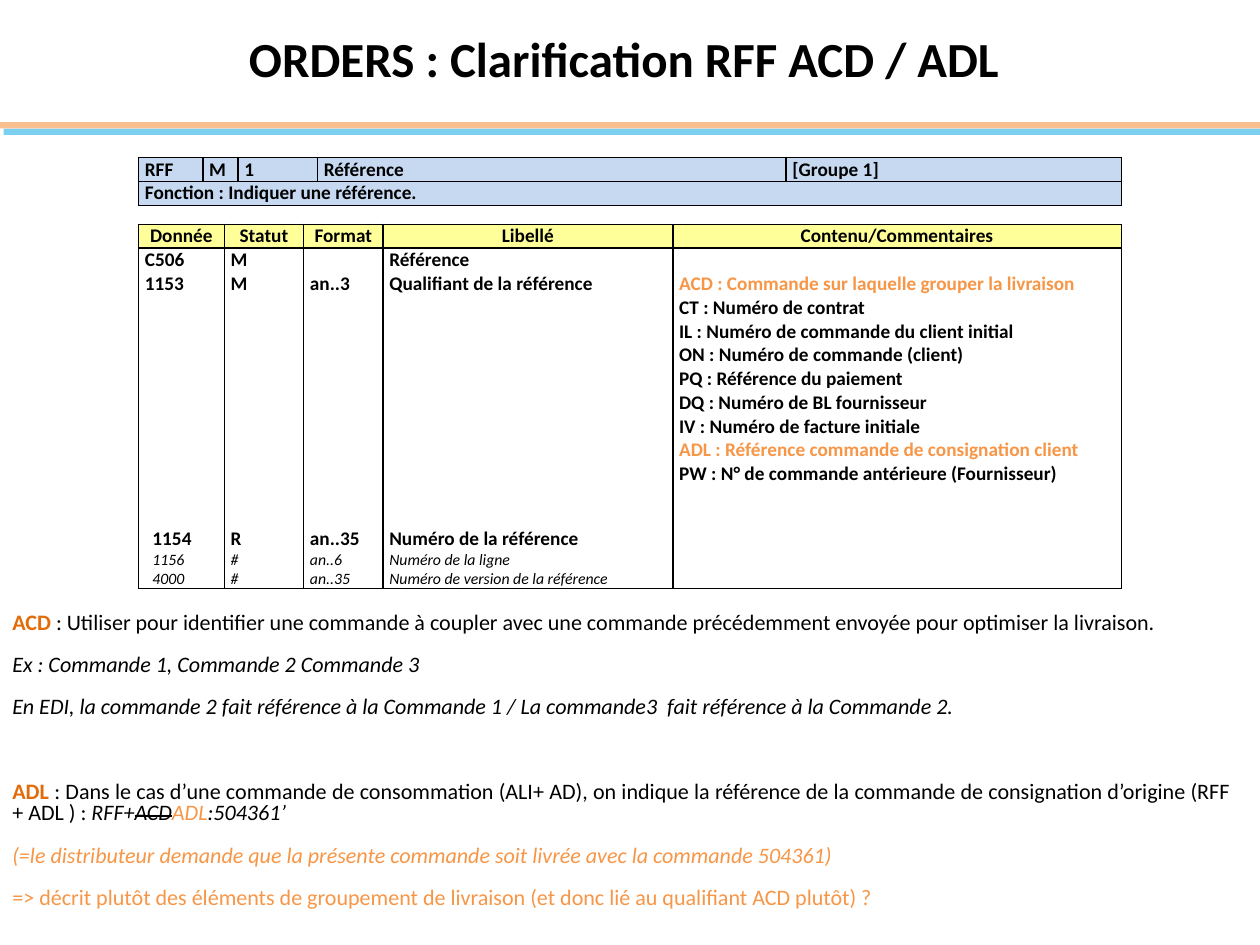
from lxml.etree import SubElement
from pptx import Presentation
from pptx.dml.color import RGBColor
from pptx.enum.shapes import MSO_SHAPE
from pptx.enum.text import MSO_ANCHOR, PP_ALIGN
from pptx.oxml.ns import qn
from pptx.util import Inches, Pt

FACE = "Calibri"
BLACK, ORANGE, RUST = "000000", "F79646", "E36C0A"
BLUE, YELLOW = "C6D9F1", "FFFF99"


def rgb(code):
    return RGBColor.from_string(code)


def style(font, size, color=BLACK, bold=False, italic=False):
    font.name, font.size = FACE, Pt(size)
    font.bold, font.italic = bold, italic
    font.color.rgb = rgb(color)


def add_bar(slide, x, y, w, h, color):
    bar = slide.shapes.add_shape(
        MSO_SHAPE.RECTANGLE, Inches(x), Inches(y), Inches(w), Inches(h))
    bar.shadow.inherit = False
    bar.fill.solid()
    bar.fill.fore_color.rgb = rgb(color)
    bar.line.fill.background()


def add_title(slide, x, y, w, h, text):
    title = slide.shapes.title
    title.left, title.top = Inches(x), Inches(y)
    title.width, title.height = Inches(w), Inches(h)
    frame = title.text_frame
    frame.vertical_anchor = MSO_ANCHOR.MIDDLE
    frame.text = text
    para = frame.paragraphs[0]
    para.alignment = PP_ALIGN.CENTER
    style(para.font, 28, bold=True)


def set_edges(cell, sides):
    """Draw 1 pt lines on the named sides (of "LRTB") and clear the rest."""
    props = cell._tc.get_or_add_tcPr()
    for side in "LRTB":
        line = SubElement(props, qn(f"a:ln{side}"), w=str(Pt(1)))
        if side in sides:
            fill = SubElement(line, qn("a:solidFill"))
            SubElement(fill, qn("a:srgbClr"), val=BLACK)
        else:
            SubElement(line, qn("a:noFill"))


def fill_cell(cell, text, size=11, fill=None, sides="LRTB", indent=0,
              align=PP_ALIGN.JUSTIFY, bold=True, marks=()):
    """Write one paragraph per line; lines that start with a mark are orange."""
    set_edges(cell, sides)
    cell.margin_left, cell.margin_right = Inches(0.05 + indent), Inches(0.05)
    cell.margin_top = cell.margin_bottom = 0
    if fill:
        cell.fill.solid()
        cell.fill.fore_color.rgb = rgb(fill)
    else:
        cell.fill.background()
    cell.text = text
    for para in cell.text_frame.paragraphs:
        para.alignment = align
        color = ORANGE if para.text.startswith(tuple(marks)) else BLACK
        style(para.font, size, color, bold, not bold)
        if not para.text:
            SubElement(para._p, qn("a:endParaRPr"), sz=str(size * 100))


def add_grid(slide, x, y, cols, rows):
    table = slide.shapes.add_table(
        len(rows), len(cols), Inches(x), Inches(y),
        Inches(sum(cols)), Inches(sum(rows))).table
    table.first_row = table.horz_banding = False
    for col, width in zip(table.columns, cols):
        col.width = Inches(width)
    for row, height in zip(table.rows, rows):
        row.height = Inches(height)
    return table


def add_segment(slide, x, y):
    table = add_grid(slide, x, y, [0.51, 0.28, 0.63, 3.72, 2.66], [0.19, 0.19])
    for i, text in enumerate(["RFF", "M", "1", "Référence", "[Groupe 1]"]):
        fill_cell(table.cell(0, i), text, fill=BLUE)
        fill_cell(table.cell(1, i), "", fill=BLUE)
    last = table.cell(1, 0)
    last.merge(table.cell(1, 4))
    last.text = "Fonction : Indiquer une référence."
    style(last.text_frame.paragraphs[0].font, 11, bold=True)


def add_fields(slide, x, y):
    codes = "\n".join([
        "ACD : Commande sur laquelle grouper la livraison",
        "CT : Numéro de contrat",
        "IL : Numéro de commande du client initial",
        "ON : Numéro de commande (client)",
        "PQ : Référence du paiement",
        "DQ : Numéro de BL fournisseur",
        "IV : Numéro de facture initiale",
        "ADL : Référence commande de consignation client",
        "PW : N° de commande antérieure (Fournisseur)",
    ])
    data = [
        ["Donnée", "Statut", "Format", "Libellé", "Contenu/Commentaires"],
        ["C506", "M", "", "Référence", ""],
        ["1153", "M", "an..3", "Qualifiant de la référence", codes],
        ["1154", "R", "an..35", "Numéro de la référence", ""],
        ["1156", "#", "an..6", "Numéro de la ligne", ""],
        ["4000", "#", "an..35", "Numéro de version de la référence", ""],
    ]
    table = add_grid(slide, x, y, [0.68, 0.63, 0.63, 2.3, 3.56],
                     [0.19, 0.19, 2.02, 0.19, 0.15, 0.15])
    end = len(data) - 1
    for r, row in enumerate(data):
        for c, text in enumerate(row):
            cell = table.cell(r, c)
            if r == 0:
                fill_cell(cell, text, fill=YELLOW, align=PP_ALIGN.CENTER)
                continue
            sides = "LR" + ("T" if r == 1 else "") + ("B" if r == end else "")
            minor = r > 3
            fill_cell(cell, text, 9 if minor else 11, sides=sides,
                      indent=0.06 if r > 2 and c == 0 else 0,
                      bold=not minor, marks=["ACD", "ADL"])


def add_notes(slide, x, y, w, h):
    """Place the remarks; each run is text, colour and style letters (b, i, s)."""
    notes = [
        [("ACD ", RUST, "b"),
         (": Utiliser pour identifier une commande à coupler avec une commande "
          "précédemment envoyée pour optimiser la livraison.", BLACK, "")],
        [("Ex : Commande 1, Commande 2 Commande 3", BLACK, "i")],
        [("En EDI, la commande 2 fait référence à la Commande 1 / "
          "La commande3  fait référence à la Commande 2.", BLACK, "i")],
        [("ADL", RUST, "b"),
         (" : Dans le cas d’une commande de consommation (ALI+ AD), on indique "
          "la référence de la commande de consignation d’origine "
          "(RFF + ADL ) : ", BLACK, ""),
         ("RFF+", BLACK, "i"), ("ACD", BLACK, "is"),
         ("ADL", ORANGE, "i"), (":504361’", BLACK, "i")],
        [("(=le distributeur demande que la présente commande soit livrée "
          "avec la commande 504361)", ORANGE, "i")],
        [("=> décrit plutôt des éléments de groupement de livraison "
          "(et donc lié au qualifiant ACD plutôt) ?", ORANGE, "")],
    ]
    gaps = [0, 6, 6, 30.3, 6, 6]
    frame = slide.shapes.add_textbox(
        Inches(x), Inches(y), Inches(w), Inches(h)).text_frame
    frame.word_wrap = True
    for i, (runs, gap) in enumerate(zip(notes, gaps)):
        para = frame.add_paragraph() if i else frame.paragraphs[0]
        para.alignment = PP_ALIGN.JUSTIFY
        para.line_spacing = 0.8
        para.space_before, para.space_after = Pt(gap), Pt(6)
        for text, color, look in runs:
            run = para.add_run()
            run.text = text
            style(run.font, 12.6, color, "b" in look, "i" in look)
            if "s" in look:
                run._r.get_or_add_rPr().set("strike", "sngStrike")


def main():
    deck = Presentation()
    deck.slide_width, deck.slide_height = Inches(10), Inches(7.5)
    slide = deck.slides.add_slide(deck.slide_layouts[5])
    add_bar(slide, 0.03, 1.02, 9.97, 0.05, "7BD0EF")
    add_bar(slide, 0, 0.97, 10, 0.05, "FAC090")
    add_title(slide, 0.04, 0.08, 9.82, 0.76,
              "ORDERS : Clarification RFF ACD / ADL")
    add_notes(slide, 0, 4.82, 9.86, 2.6)
    add_fields(slide, 1.1, 1.78)
    add_segment(slide, 1.1, 1.25)
    deck.save("out.pptx")


if __name__ == "__main__":
    main()
